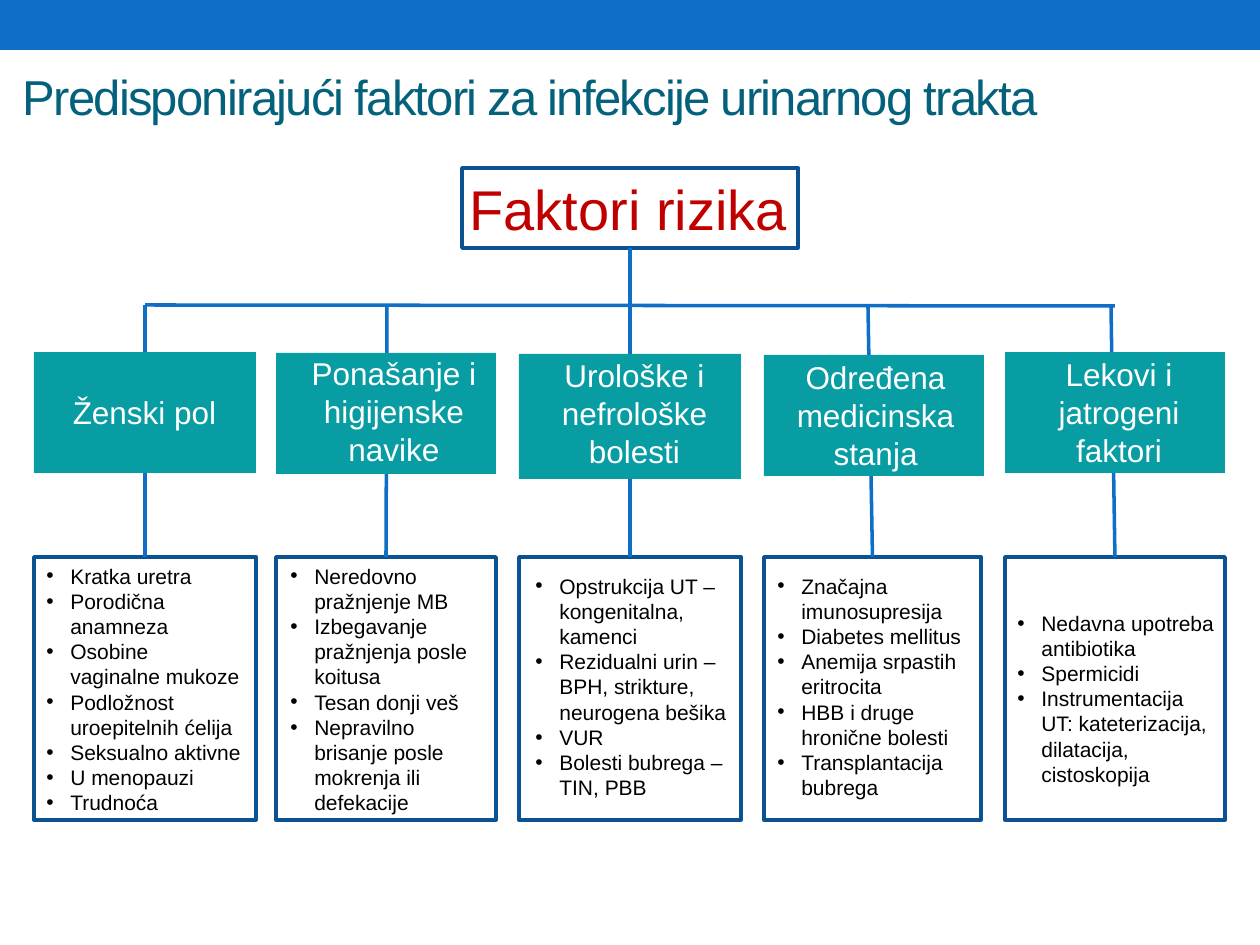
"""Build a slide with a tree of risk factors for urinary tract infections."""
import pptx
import pptx.dml.color
import pptx.enum.shapes
import pptx.enum.text
import pptx.oxml.ns
import pptx.util
from lxml import etree

PX = 914400 / 126
FONT = "Arial"
COLORS = {
    "bar": "0F6FC6", "title": "04617B", "root": "C00000", "header": "089CA3",
    "border": "0B5292", "white": "FFFFFF", "black": "000000",
}
ALIGN = pptx.enum.text.PP_ALIGN
TITLE = "Predisponirajući faktori za infekcije urinarnog trakta"
ROOT = {"text": "Faktori rizika", "box": (462, 168, 336, 80), "label": (408, 168, 441, 81)}
LIST_TOP, LIST_HEIGHT = 557, 263
BUS = (145, 305, 1115, 306)

FACTORS = [
    {"name": "Ženski pol", "header": (34, 352, 222, 121), "label": (35, 387, 219, 50),
     "list_width": 222, "list": (34, 557, 222, 267), "stem": (145, 305),
     "items": ["Kratka uretra", "Porodična anamneza", "Osobine vaginalne mukoze",
               "Podložnost uroepitelnih ćelija", "Seksualno aktivne", "U menopauzi", "Trudnoća"]},
    {"name": "Ponašanje i higijenske navike", "header": (276, 353, 220, 121),
     "label": (282, 348, 224, 127),
     "list_width": 220, "list": (278, 557, 215, 267), "stem": (387, 305),
     "items": ["Neredovno pražnjenje MB", "Izbegavanje pražnjenja posle koitusa",
               "Tesan donji veš", "Nepravilno brisanje posle mokrenja ili defekacije"]},
    {"name": "Urološke i nefrološke bolesti", "header": (519, 354, 222, 125),
     "label": (527, 350, 215, 127),
     "list_width": 222, "list": (523, 567, 219, 242), "stem": None,
     "items": ["Opstrukcija UT – kongenitalna, kamenci",
               "Rezidualni urin – BPH, strikture, neurogena bešika",
               "VUR", "Bolesti bubrega – TIN, PBB"]},
    {"name": "Određena medicinska stanja", "header": (764, 355, 220, 121),
     "label": (766, 352, 219, 127),
     "list_width": 217, "list": (765, 567, 220, 242), "stem": (868, 306),
     "items": ["Značajna imunosupresija", "Diabetes mellitus", "Anemija srpastih eritrocita",
               "HBB i druge hronične bolesti", "Transplantacija bubrega"]},
    {"name": "Lekovi i jatrogeni faktori", "header": (1005, 352, 220, 121),
     "label": (1009, 349, 220, 127),
     "list_width": 220, "list": (1005, 604, 222, 190), "stem": (1111, 306),
     "items": ["Nedavna upotreba antibiotika", "Spermicidi",
               "Instrumentacija UT: kateterizacija, dilatacija, cistoskopija"]},
]


def emu(*lengths):
    return [pptx.util.Emu(round(length * PX)) for length in lengths]


def rgb(name):
    return pptx.dml.color.RGBColor.from_string(COLORS[name])


def add_rectangle(slide, box, fill=None, border=None):
    shape = slide.shapes.add_shape(pptx.enum.shapes.MSO_SHAPE.RECTANGLE, *emu(*box))
    shape.shadow.inherit = False
    if fill:
        shape.fill.solid()
        shape.fill.fore_color.rgb = rgb(fill)
    else:
        shape.fill.background()
    if border:
        shape.line.color.rgb = rgb(border)
        shape.line.width = pptx.util.Pt(2.08)
    else:
        shape.line.fill.background()
    return shape


def add_line(slide, x1, y1, x2, y2):
    line = slide.shapes.add_connector(
        pptx.enum.shapes.MSO_CONNECTOR.STRAIGHT, *emu(x1, y1, x2, y2))
    line.line.color.rgb = rgb("bar")
    line.line.width = pptx.util.Pt(2)
    etree.SubElement(line._element.spPr, pptx.oxml.ns.qn("a:effectLst"))
    return line


def write_run(paragraph, text, size, color):
    run = paragraph.add_run()
    run.text = text
    run.font.name = FONT
    run.font.size = pptx.util.Pt(size)
    run.font.color.rgb = rgb(color)
    return run


def add_bullet(paragraph):
    properties = paragraph._p.get_or_add_pPr()
    indent = round(0.19 * 914400)
    properties.set("marL", str(indent))
    properties.set("indent", str(-indent))
    etree.SubElement(properties, pptx.oxml.ns.qn("a:buFont")).set("typeface", FONT)
    etree.SubElement(properties, pptx.oxml.ns.qn("a:buChar")).set("char", "•")


def add_text(slide, box, lines, size, color, align=ALIGN.LEFT, bullets=False):
    frame = slide.shapes.add_textbox(*emu(*box)).text_frame
    frame.word_wrap = True
    frame.auto_size = pptx.enum.text.MSO_AUTO_SIZE.SHAPE_TO_FIT_TEXT
    for index, line in enumerate(lines):
        paragraph = frame.add_paragraph() if index else frame.paragraphs[0]
        paragraph.alignment = align
        if bullets:
            add_bullet(paragraph)
        write_run(paragraph, line, size, color)


def add_title(slide):
    title = slide.shapes.title
    title.left, title.top, title.width, title.height = emu(10, 55, 1186, 81)
    frame = title.text_frame
    frame.auto_size = pptx.enum.text.MSO_AUTO_SIZE.NONE
    frame.vertical_anchor = pptx.enum.text.MSO_ANCHOR.MIDDLE
    frame.paragraphs[0].alignment = ALIGN.LEFT
    run = write_run(frame.paragraphs[0], TITLE, 28, "title")
    run.font._element.set("spc", "-100")


def add_tree(slide):
    root = add_rectangle(slide, ROOT["box"], border="border")
    for factor in FACTORS:
        left = factor["header"][0]
        width = factor["list_width"]
        list_box = add_rectangle(slide, (left, LIST_TOP, width, LIST_HEIGHT), border="border")
        stem = add_line(slide, *(factor["stem"] or (630, 248)), left + width / 2, LIST_TOP)
        if factor["stem"] is None:
            stem.begin_connect(root, 2)
        stem.end_connect(list_box, 0)
        add_rectangle(slide, factor["header"], fill="header")
        add_text(slide, factor["label"], [factor["name"]], 18, "white", ALIGN.CENTER)
        add_text(slide, factor["list"], factor["items"], 12, "black", bullets=True)
    add_line(slide, *BUS)
    add_text(slide, ROOT["label"], [ROOT["text"]], 32, "root", ALIGN.CENTER)


def main():
    presentation = pptx.Presentation()
    presentation.slide_width, presentation.slide_height = emu(1260, 945)
    slide = presentation.slides.add_slide(presentation.slide_layouts[5])
    add_rectangle(slide, (0, 0, 1260, 50), fill="bar")
    add_title(slide)
    add_tree(slide)
    presentation.save("out.pptx")


if __name__ == "__main__":
    main()
